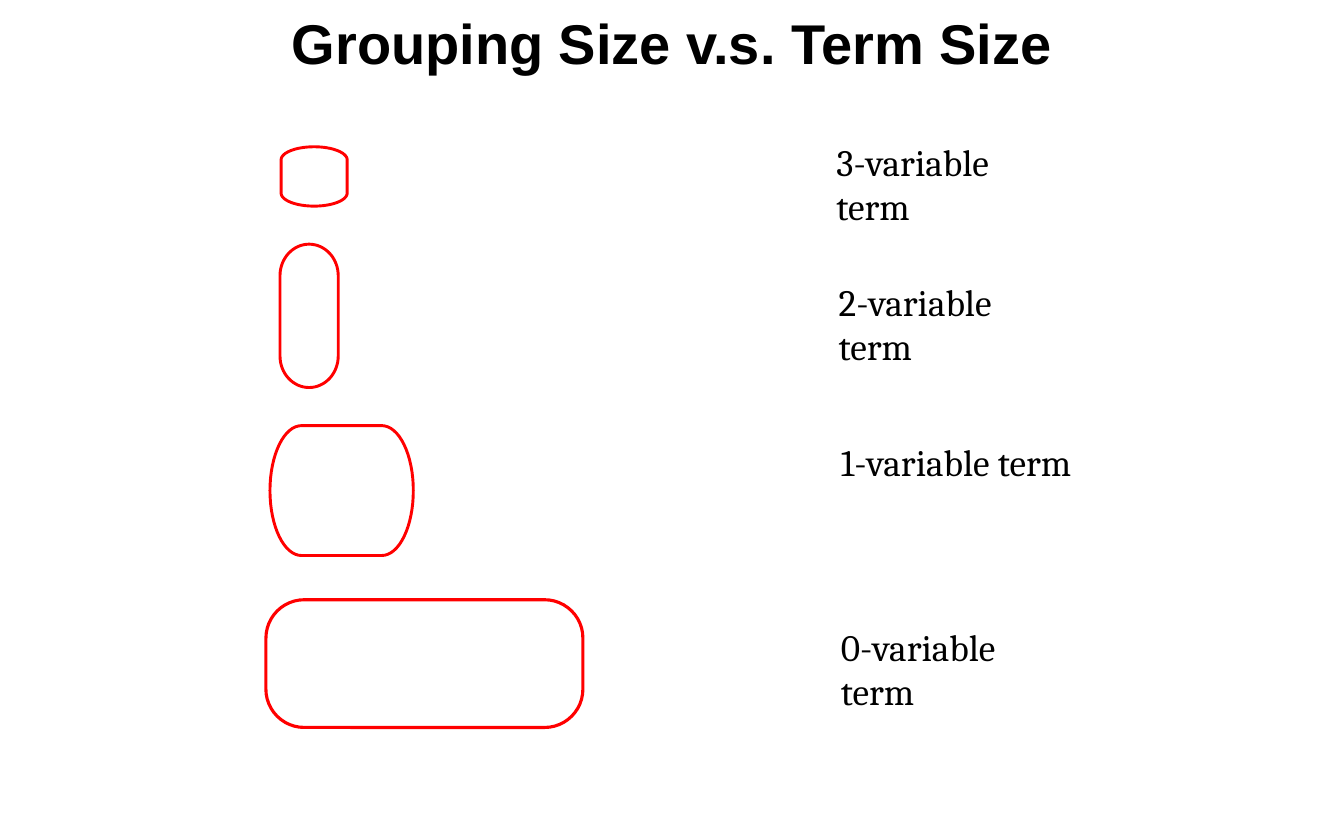
import math

from pptx import Presentation
from pptx.dml.color import RGBColor
from pptx.enum.shapes import MSO_SHAPE
from pptx.enum.text import MSO_ANCHOR, MSO_AUTO_SIZE, PP_ALIGN
from pptx.util import Inches, Pt

ROUNDED = MSO_SHAPE.ROUNDED_RECTANGLE
MIDDLE, TOP = MSO_ANCHOR.MIDDLE, MSO_ANCHOR.TOP
CENTER, LEFT = PP_ALIGN.CENTER, PP_ALIGN.LEFT
GROW = MSO_AUTO_SIZE.SHAPE_TO_FIT_TEXT
BLACK = RGBColor(0, 0, 0)
RED = RGBColor(255, 0, 0)
END_RATIO = 0.22  # depth of each curved end, as a share of the width
ARC_STEPS = 32


def add_curved_end_loop(shapes, left, top, width, height):
    """Add a loop with straight long sides and half-ellipse ends."""
    end = width * END_RATIO
    points = []
    for side, center_x in ((1, left + width - end), (-1, left + end)):
        for step in range(ARC_STEPS + 1):
            angle = math.pi * (step / ARC_STEPS - 0.5)
            x = center_x + side * end * math.cos(angle)
            y = top + height / 2 + side * height / 2 * math.sin(angle)
            points.append((Inches(x), Inches(y)))
    builder = shapes.build_freeform(*points[0])
    builder.add_line_segments(points[1:], close=True)
    return builder.convert_to_shape()


def style_loop(loop, rotation, line_width):
    loop.rotation = rotation
    loop.shadow.inherit = False
    loop.fill.background()
    loop.line.color.rgb = RED
    loop.line.width = Pt(line_width)


deck = Presentation()
deck.slide_width, deck.slide_height = Inches(12), Inches(7.5)
slide = deck.slides.add_slide(deck.slide_layouts[5])
shapes = slide.shapes

title = shapes.title
title.left, title.top = Inches(1), Inches(0)
title.width, title.height = Inches(10), Inches(0.75)
title.text_frame.text = "Grouping Size v.s. Term Size"
title.text_frame.vertical_anchor = MIDDLE
title_para = title.text_frame.paragraphs[0]
title_para.alignment = CENTER
title_font = title_para.runs[0].font
title_font.name, title_font.size, title_font.bold = "Arial", Pt(36), True
title_font.color.rgb = BLACK

# Groupings of two, one and four cells, then the whole map
pair_column = (2.12, 2.56, 1.28, 0.52, 270)
single_cell = (2.54, 1.28, 0.53, 0.59, 270)
square_of_four = (2.41, 3.8, 1.28, 1.16, 180)
for *bounds, rotation in (pair_column, single_cell, square_of_four):
    style_loop(add_curved_end_loop(shapes, *bounds), rotation, 1.88)

whole_map = shapes.add_shape(
    ROUNDED, Inches(3.22), Inches(4.51), Inches(1.14), Inches(2.83))
whole_map.adjustments[0] = 0.3
style_loop(whole_map, 270, 2)

term_labels = [
    ("3-variable term", 7.37, 1.19),
    ("2-variable term", 7.39, 2.44),
    ("1-variable term", 7.41, 3.87),
    ("0-variable term", 7.41, 5.52),
]
for text, left, top in term_labels:
    box = shapes.add_textbox(Inches(left), Inches(top), Inches(2.26), Inches(0.51))
    frame = box.text_frame
    frame.word_wrap = True
    frame.auto_size = GROW
    frame.vertical_anchor = TOP
    frame.text = text
    para = frame.paragraphs[0]
    para.alignment = LEFT
    font = para.runs[0].font
    font.name, font.size = "Cambria", Pt(24)
    font.color.rgb = BLACK

deck.save("out.pptx")
